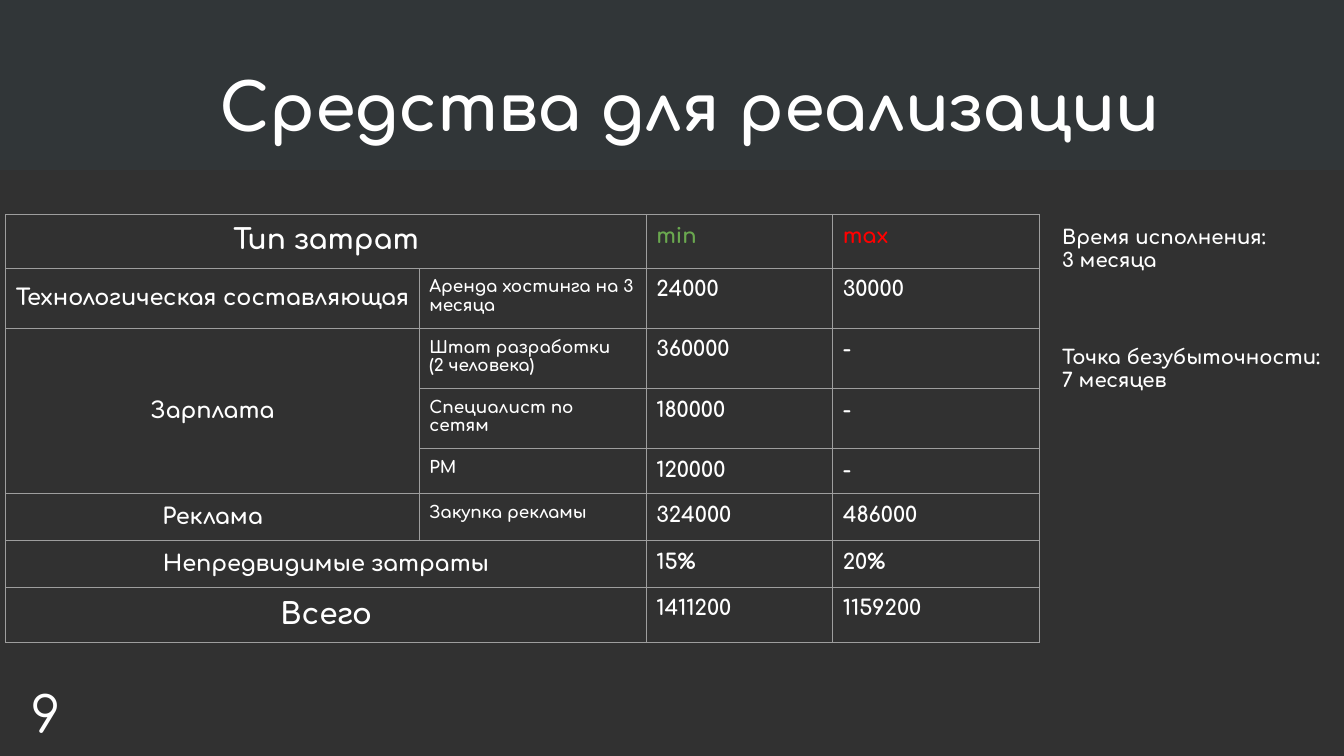
from lxml.etree import SubElement
from pptx import Presentation
from pptx.dml.color import RGBColor
from pptx.enum.shapes import MSO_SHAPE
from pptx.enum.text import MSO_ANCHOR, MSO_AUTO_SIZE, PP_ALIGN
from pptx.oxml.ns import qn
from pptx.util import Cm, Pt

BACKGROUND = RGBColor(0x31, 0x31, 0x31)
BAND = RGBColor(0x31, 0x3C, 0x3F)
WHITE = RGBColor(0xFF, 0xFF, 0xFF)
GREEN = RGBColor(0x6A, 0xA8, 0x4F)
RED = RGBColor(0xFF, 0x00, 0x00)
BORDER = RGBColor(0x9E, 0x9E, 0x9E)

COLUMNS = [5.21, 5.21, 5.72, 4.7, 5.21]
ROWS = [1.24, 1.5, 1.5] + [1.07] * 5
COSTS = [
    ["Тип затрат", "", "", "min", "max"],
    ["Технологическая составляющая", "", "Аренда хостинга на 3 месяца", "24000", "30000"],
    ["Зарплата", "", "Штат разработки\n(2 человека)", "360000", "-"],
    ["", "", "Специалист по сетям", "180000", "-"],
    ["", "", "PM", "120000", "-"],
    ["Реклама", "", "Закупка рекламы", "324000", "486000"],
    ["Непредвидимые затраты", "", "", "15%", "20%"],
    ["Всего", "", "", "1159200", "1411200"],
]
MERGES = [(0, 0, 0, 2), (1, 0, 1, 1), (2, 0, 4, 1), (5, 0, 5, 1), (6, 0, 6, 2), (7, 0, 7, 2)]
COLUMN_SIZES = [16, 16, 12, 15, 15]
SPECIAL_SIZES = {(0, 0): 20, (7, 0): 21}
SPECIAL_COLORS = {(0, 3): GREEN, (0, 4): RED}


class SlideBuilder:
    font = "Comfortaa"
    inset = Cm(0.25)

    def __init__(self, prs):
        self.s = prs.slides.add_slide(prs.slide_layouts[5])
        fill = self.s.background.fill
        fill.solid()
        fill.fore_color.rgb = BACKGROUND

    def add_lines(self, tf, text, size, color=WHITE, bold=True, align=PP_ALIGN.LEFT):
        for i, line in enumerate(text.split("\n")):
            p = tf.add_paragraph() if i else tf.paragraphs[0]
            p.alignment = align
            r = p.add_run()
            r.text = line
            r.font.name = self.font
            r.font.size = Pt(size)
            r.font.bold = bold
            r.font.color.rgb = color

    def band(self, width, height, alpha):
        sp = self.s.shapes.add_shape(MSO_SHAPE.RECTANGLE, 0, 0, width, height)
        sp.shadow.inherit = False
        sp.fill.solid()
        sp.fill.fore_color.rgb = BAND
        sp.line.fill.background()
        color = sp._element.spPr.find(qn("a:solidFill"))[0]
        SubElement(color, qn("a:alpha"), val=str(alpha * 1000))

    def title(self, text, left, top, width, height, size):
        sp = self.s.shapes.title
        self.s.shapes._spTree.append(sp._element)
        sp.left, sp.top, sp.width, sp.height = left, top, width, height
        tf = sp.text_frame
        tf.auto_size = MSO_AUTO_SIZE.NONE
        tf.vertical_anchor = MSO_ANCHOR.MIDDLE
        self.add_lines(tf, text, size, align=PP_ALIGN.CENTER)
        tf.paragraphs[0].line_spacing = 0.9

    def text(self, text, left, top, width, height, size, **style):
        tf = self.s.shapes.add_textbox(left, top, width, height).text_frame
        tf.word_wrap = True
        tf.auto_size = MSO_AUTO_SIZE.SHAPE_TO_FIT_TEXT
        tf.margin_left = tf.margin_right = tf.margin_top = tf.margin_bottom = self.inset
        self.add_lines(tf, text, size, **style)

    def format_cell(self, cell):
        cell.margin_left = cell.margin_right = self.inset
        cell.margin_top = cell.margin_bottom = self.inset
        tcPr = cell._tc.get_or_add_tcPr()
        for side in "LRTB":
            ln = SubElement(tcPr, qn(f"a:ln{side}"), w=str(Pt(0.75)))
            SubElement(SubElement(ln, qn("a:solidFill")), qn("a:srgbClr"), val=str(BORDER))
        cell.fill.background()

    def table(self, left, top):
        table = self.s.shapes.add_table(
            len(ROWS), len(COLUMNS), left, top, Cm(sum(COLUMNS)), Cm(sum(ROWS))
        ).table
        table.first_row = table.horz_banding = False
        for column, width in zip(table.columns, COLUMNS):
            column.width = Cm(width)
        for row, height in zip(table.rows, ROWS):
            row.height = Cm(height)
        for top_row, first, bottom_row, last in MERGES:
            table.cell(top_row, first).merge(table.cell(bottom_row, last))
        for i, values in enumerate(COSTS):
            for j, value in enumerate(values):
                cell = table.cell(i, j)
                self.format_cell(cell)
                if not value:
                    continue
                if i and j == 0:
                    cell.vertical_anchor = MSO_ANCHOR.MIDDLE
                self.add_lines(
                    cell.text_frame,
                    value,
                    SPECIAL_SIZES.get((i, j), COLUMN_SIZES[j]),
                    SPECIAL_COLORS.get((i, j), WHITE),
                    align=PP_ALIGN.LEFT if j else PP_ALIGN.CENTER,
                )


def main():
    prs = Presentation()
    prs.slide_width = Cm(33.87)
    prs.slide_height = Cm(19.05)
    slide = SlideBuilder(prs)
    slide.band(prs.slide_width, Cm(4.29), alpha=54)
    slide.title("Средства для реализации ", Cm(4.5), Cm(1.27), Cm(26.26), Cm(3), 46.5)
    slide.text("9", 0, Cm(16.97), Cm(2.31), Cm(2.06), 36, bold=False, align=PP_ALIGN.CENTER)
    slide.table(Cm(0.15), Cm(5.41))
    slide.text("Время исполнения:\n3 месяца", Cm(26.52), Cm(5.41), Cm(6.45), Cm(1.7), 14)
    slide.text("Точка безубыточности:\n7 месяцев", Cm(26.52), Cm(8.43), Cm(7.47), Cm(1.7), 14)
    prs.save("out.pptx")


if __name__ == "__main__":
    main()
